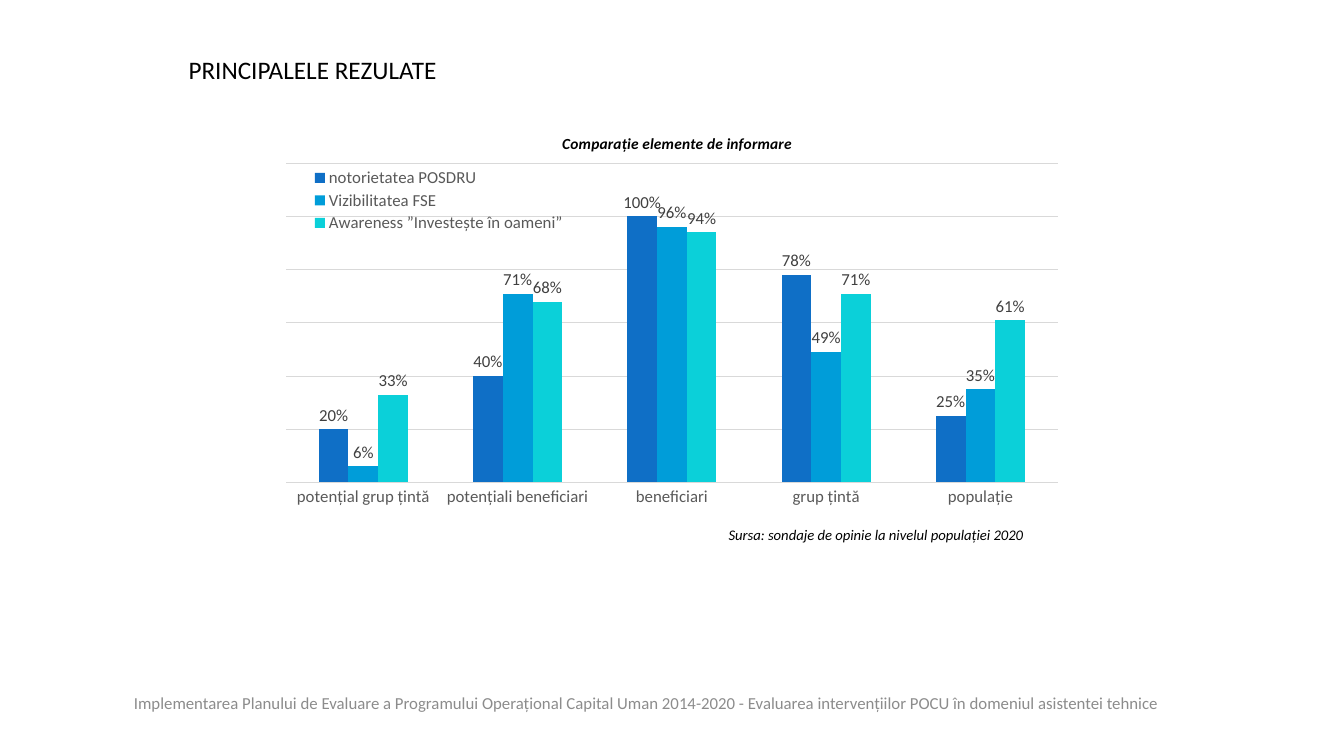
from dataclasses import dataclass

from lxml.etree import SubElement
from pptx import Presentation
from pptx.chart.data import CategoryChartData
from pptx.dml.color import RGBColor
from pptx.enum.chart import XL_CHART_TYPE, XL_LABEL_POSITION, XL_LEGEND_POSITION, XL_TICK_MARK
from pptx.enum.text import MSO_ANCHOR, PP_ALIGN
from pptx.oxml.ns import qn
from pptx.util import Inches, Pt


@dataclass(frozen=True)
class Theme:
    font: str = "Calibri"
    ink: str = "000000"
    axis_text: str = "595959"
    label_text: str = "404040"
    footer_text: str = "8C8C8C"
    grid: str = "D9D9D9"
    series: tuple = ("0F6FC6", "009DD9", "0BD0D9")
    heading_size: float = 18
    chart_title_size: float = 11
    source_size: float = 10.5
    base_size: float = 12
    grid_width: float = 0.75


THEME = Theme()

CATEGORIES = ("potențial grup țintă", "potențiali beneficiari", "beneficiari", "grup țintă", "populație")
SURVEY = {
    "notorietatea POSDRU": (0.2, 0.4, 1, 0.78, 0.25),
    "Vizibilitatea FSE": (0.06, 0.71, 0.96, 0.49, 0.35),
    "Awareness ”Investește în oameni”": (0.33, 0.68, 0.94, 0.71, 0.61),
}


def apply_format(target, values):
    for name, value in values.items():
        setattr(target, name, value)


def style_font(font, size, color, bold=False, italic=False):
    apply_format(font, {"name": THEME.font, "size": Pt(size), "bold": bold, "italic": italic})
    font.color.rgb = RGBColor.from_string(color)


def style_line(line):
    line.color.rgb = RGBColor.from_string(THEME.grid)
    line.width = Pt(THEME.grid_width)


def write_text(frame, text, size, color, align=PP_ALIGN.LEFT, anchor=MSO_ANCHOR.TOP, italic=False):
    apply_format(frame, {"word_wrap": True, "vertical_anchor": anchor, "text": text})
    paragraph = frame.paragraphs[0]
    paragraph.alignment = align
    style_font(paragraph.runs[0].font, size, color, italic=italic)


def add_heading(slide, text, left, top, width, height):
    heading = slide.shapes.title
    apply_format(heading, {
        "left": Inches(left), "top": Inches(top),
        "width": Inches(width), "height": Inches(height),
    })
    write_text(heading.text_frame, text, THEME.heading_size, THEME.ink)


def add_caption(slide, text, left, top, width, height, **text_format):
    caption = slide.shapes.add_textbox(Inches(left), Inches(top), Inches(width), Inches(height))
    write_text(caption.text_frame, text, **text_format)


def place_chart_part(part, position, index, inner=False):
    for previous in part.findall(qn("c:layout")):
        part.remove(previous)
    layout = part.makeelement(qn("c:layout"))
    part.insert(index(part), layout)
    manual = SubElement(layout, qn("c:manualLayout"))
    if inner:
        SubElement(manual, qn("c:layoutTarget")).set("val", "inner")
    for mode in ("xMode", "yMode"):
        SubElement(manual, qn(f"c:{mode}")).set("val", "edge")
    for key, value in position.items():
        SubElement(manual, qn(f"c:{key}")).set("val", str(value))


def before_overlay(part):
    return part.index(part.find(qn("c:overlay")))


def first_child(part):
    return 0


def style_axes(chart):
    categories = chart.category_axis
    apply_format(categories, {"major_tick_mark": XL_TICK_MARK.NONE, "has_major_gridlines": False})
    style_font(categories.tick_labels.font, THEME.base_size, THEME.axis_text)
    style_line(categories.format.line)
    percent = chart.value_axis
    apply_format(percent, {
        "minimum_scale": 0, "maximum_scale": 1.2, "major_unit": 0.2,
        "has_major_gridlines": True, "visible": False,
    })
    style_line(percent.major_gridlines.format.line)


def style_series(plot):
    apply_format(plot, {"gap_width": 219, "overlap": 0, "vary_by_categories": False})
    for series, color in zip(plot.series, THEME.series):
        series.format.fill.solid()
        series.format.fill.fore_color.rgb = RGBColor.from_string(color)
        labels = series.data_labels
        apply_format(labels, {
            "show_value": True, "number_format": "0%", "number_format_is_linked": False,
            "position": XL_LABEL_POSITION.OUTSIDE_END,
        })
        style_font(labels.font, THEME.base_size, THEME.label_text)


def add_survey_chart(slide, title, left, top, width, height):
    survey = CategoryChartData(number_format="0%")
    survey.categories = CATEGORIES
    for name, shares in SURVEY.items():
        survey.add_series(name, shares)
    chart = slide.shapes.add_chart(
        XL_CHART_TYPE.COLUMN_CLUSTERED,
        Inches(left), Inches(top), Inches(width), Inches(height), survey,
    ).chart
    style_font(chart.font, THEME.base_size, THEME.ink)
    apply_format(chart, {"has_title": True, "has_legend": True})
    heading = chart.chart_title.text_frame
    heading.text = title
    style_font(heading.paragraphs[0].runs[0].font, THEME.chart_title_size, THEME.ink, bold=True, italic=True)
    apply_format(chart.legend, {"position": XL_LEGEND_POSITION.BOTTOM, "include_in_layout": False})
    style_font(chart.legend.font, THEME.base_size, THEME.axis_text)
    style_axes(chart)
    style_series(chart.plots[0])
    root = chart.element.find(qn("c:chart"))
    place_chart_part(root.find(qn("c:title")), {"x": 0.36, "y": 0.04}, before_overlay)
    place_chart_part(root.find(qn("c:legend")), {"x": 0.04, "y": 0.12, "w": 0.34, "h": 0.16}, before_overlay)
    place_chart_part(
        root.find(qn("c:plotArea")), {"x": 0.02, "y": 0.115, "w": 0.96, "h": 0.73}, first_child, inner=True
    )


def main():
    deck = Presentation()
    apply_format(deck, {"slide_width": Inches(13.33), "slide_height": Inches(7.5)})
    slide = deck.slides.add_slide(deck.slide_layouts.get_by_name("Title Only"))
    add_survey_chart(slide, "Comparație elemente de informare", 2.68, 1.12, 7.97, 4.34)
    add_caption(
        slide, "Sursa: sondaje de opinie la nivelul populației 2020", 4.93, 5.17, 5.32, 0.29,
        size=THEME.source_size, color=THEME.ink, align=PP_ALIGN.RIGHT, italic=True,
    )
    add_heading(slide, "PRINCIPALELE REZULATE", 1.77, 0.49, 7.17, 0.4)
    add_caption(
        slide,
        "Implementarea Planului de Evaluare a Programului Operațional Capital Uman 2014-2020 - "
        "Evaluarea intervențiilor POCU în domeniul asistentei tehnice",
        1.23, 6.77, 11.04, 0.4,
        size=THEME.base_size, color=THEME.footer_text, anchor=MSO_ANCHOR.MIDDLE,
    )
    deck.save("out.pptx")


if __name__ == "__main__":
    main()
